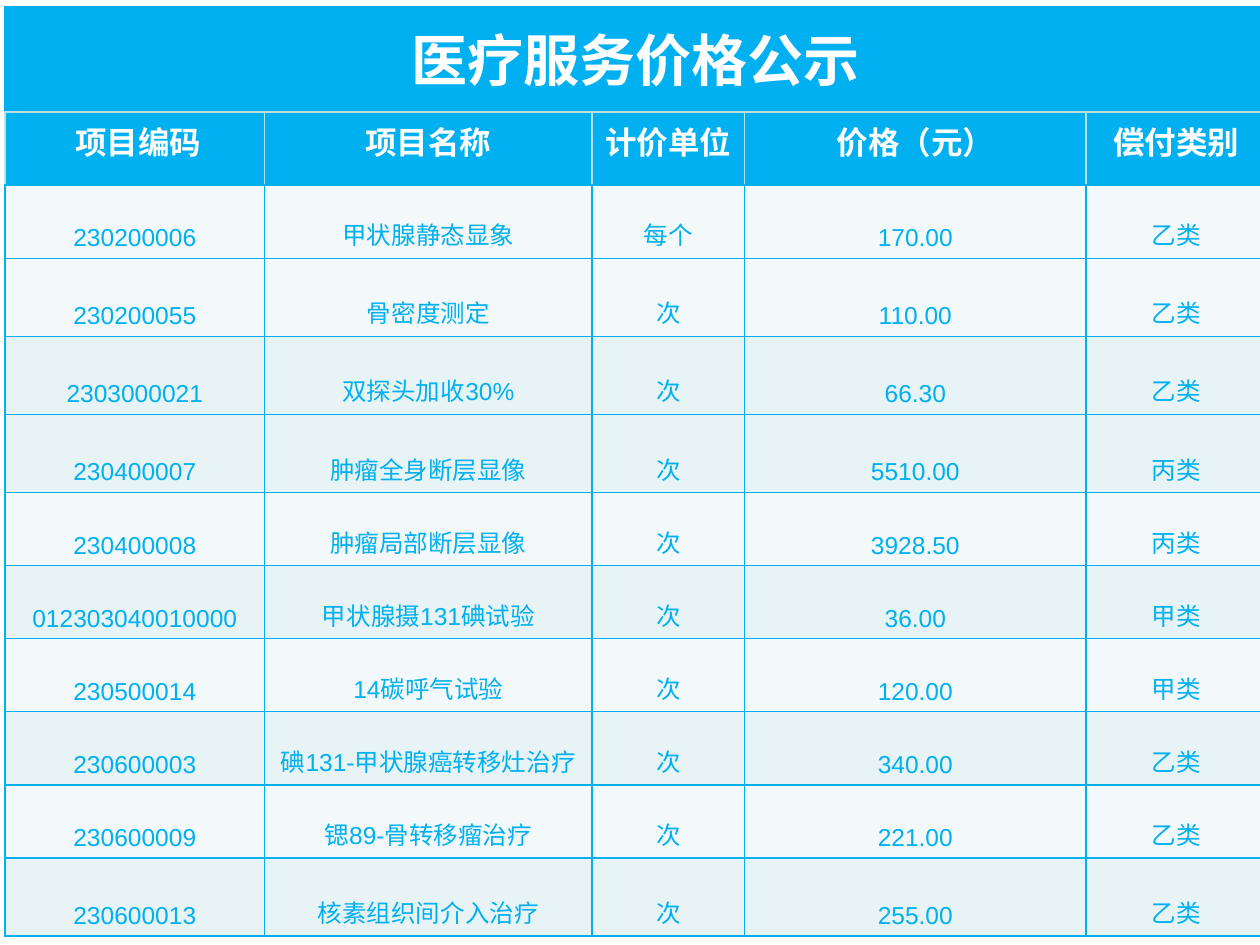
from lxml.etree import SubElement as Sub
from pptx import Presentation
from pptx.dml.color import RGBColor
from pptx.enum.text import MSO_ANCHOR as Anchor, PP_ALIGN as Align
from pptx.oxml.ns import qn
from pptx.util import Inches, Pt

BLUE = RGBColor(0x00, 0xB0, 0xF0)
PALE = RGBColor(0xBB, 0xE0, 0xE3)
WHITE = RGBColor(0xFF, 0xFF, 0xFF)
LIGHT = RGBColor(0xF3, 0xF9, 0xFA)
TINT = RGBColor(0xE7, 0xF3, 0xF4)

COLS = [2.06, 2.6, 1.21, 2.71, 1.43]
ROWS = [0.84] + [0.58] * 2 + [0.62] * 3 + [0.58] * 5 + [0.62]
BANDS = [LIGHT, LIGHT, TINT, TINT] + [LIGHT, TINT] * 3
TITLE = "医疗服务价格公示"
HEADS = [" 项目编码", "项目名称", "计价单位", "价格（元）", "偿付类别"]
ITEMS = [
    ("230200006", "甲状腺静态显象", "每个", "170.00", "乙类"),
    ("230200055", "骨密度测定", "次", "110.00", "乙类"),
    ("2303000021", "双探头加收30%", "次", "66.30", "乙类"),
    ("230400007", "肿瘤全身断层显像", "次", "5510.00", "丙类"),
    ("230400008", "肿瘤局部断层显像", "次", "3928.50", "丙类"),
    ("012303040010000", "甲状腺摄131碘试验", "次", "36.00", "甲类"),
    ("230500014", "14碳呼气试验", "次", "120.00", "甲类"),
    ("230600003", "碘131-甲状腺癌转移灶治疗", "次", "340.00", "乙类"),
    ("230600009", "锶89-骨转移瘤治疗", "次", "221.00", "乙类"),
    ("230600013", "核素组织间介入治疗", "次", "255.00", "乙类"),
]


def edge(cell, left, right, top, bottom):
    """Draw the four borders of a cell in the given colours."""
    props = cell._tc.get_or_add_tcPr()
    for side, color in zip("LRTB", (left, right, top, bottom)):
        line = Sub(props, qn(f"a:ln{side}"), w=str(Pt(1)))
        fill = Sub(line, qn("a:solidFill"))
        Sub(fill, qn("a:srgbClr"), val=str(color))


def paint(cell, color, edges):
    """Give a cell its borders and fill."""
    edge(cell, *edges)
    cell.fill.solid()
    cell.fill.fore_color.rgb = color


def write(cell, text, size, color, bold):
    """Put one centred run in a cell and return its paragraph."""
    para = cell.text_frame.paragraphs[0]
    para.alignment = Align.CENTER
    run = para.add_run()
    run.text = text
    font = run.font
    font.name, font.size, font.bold = "Arial", Pt(size), bold
    font.color.rgb = color
    return para


def add_grid(slide):
    """Add the empty table with its column and row sizes."""
    frame = slide.shapes.add_table(
        len(ROWS), len(COLS), Inches(0.04), Inches(0.05),
        Inches(sum(COLS)), Inches(sum(ROWS)))
    grid = frame.table
    grid.first_row = grid.horz_banding = False
    for col, width in zip(grid.columns, COLS):
        col.width = Inches(width)
    for row, height in zip(grid.rows, ROWS):
        row.height = Inches(height)
    return grid


def fill_title(grid):
    """Fill the merged title row."""
    cells = grid.rows[0].cells
    for cell in cells:
        paint(cell, BLUE, (BLUE, BLUE, BLUE, PALE))
    head = grid.cell(0, 0)
    head.merge(grid.cell(0, len(COLS) - 1))
    head.vertical_anchor = Anchor.MIDDLE
    write(head, TITLE, 32, WHITE, True).line_spacing = 0.9


def fill_heads(grid):
    """Fill the row of column names."""
    for cell, text in zip(grid.rows[1].cells, HEADS):
        paint(cell, BLUE, (PALE, PALE, PALE, BLUE))
        write(cell, text, 18, WHITE, True)


def fill_item(row, item, band):
    """Fill one row of the price list."""
    for cell, text in zip(row.cells, item):
        paint(cell, band, (BLUE,) * 4)
        cell.margin_left = cell.margin_right = cell.margin_top = Inches(0.01)
        cell.margin_bottom = Inches(0.05)
        cell.vertical_anchor = Anchor.BOTTOM
        write(cell, text, 14, BLUE, False)


def main():
    """Build the price list slide."""
    deck = Presentation()
    deck.slide_width, deck.slide_height = Inches(10), Inches(7.5)
    slide = deck.slides.add_slide(deck.slide_layouts[6])
    grid = add_grid(slide)
    fill_title(grid)
    fill_heads(grid)
    for pos, (item, band) in enumerate(zip(ITEMS, BANDS), 2):
        fill_item(grid.rows[pos], item, band)
    deck.save("out.pptx")


if __name__ == "__main__":
    main()
